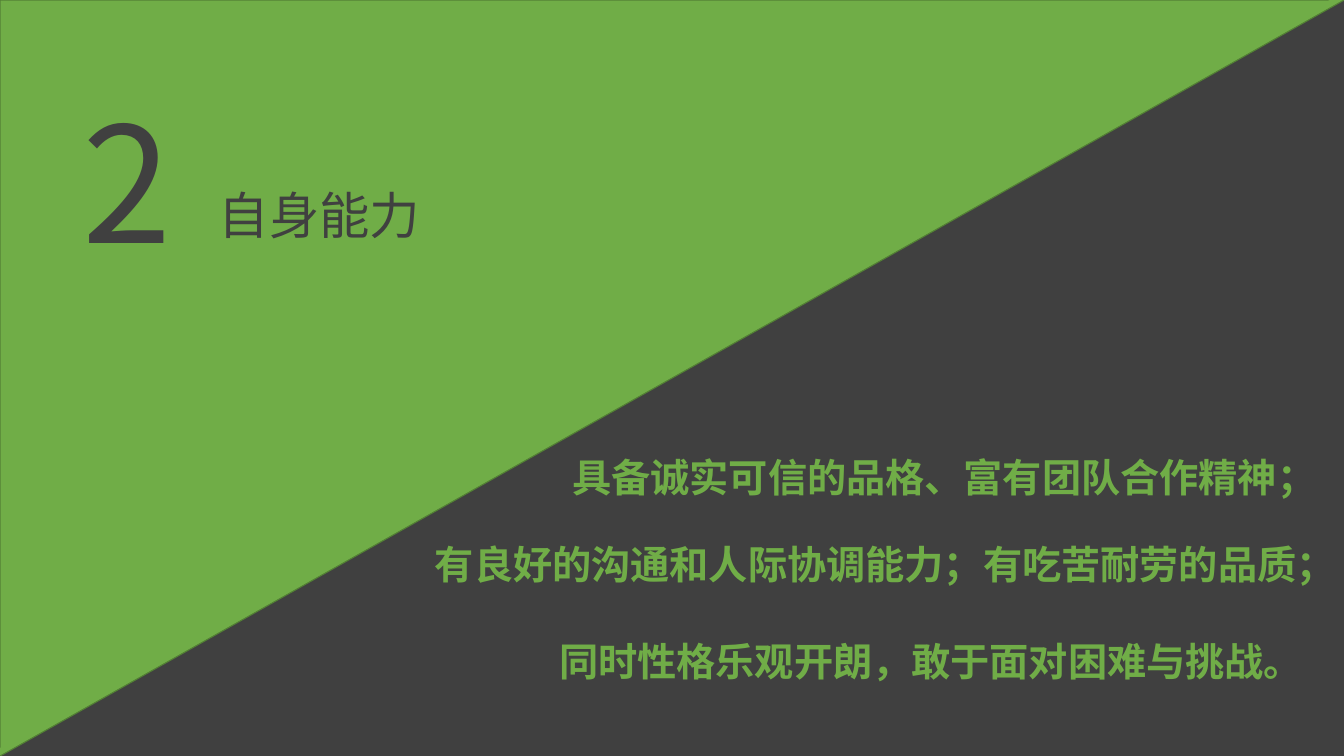
from dataclasses import dataclass

from lxml import etree
from pptx import Presentation
from pptx import util as u
from pptx.dml.color import RGBColor
from pptx.enum import shapes, text
from pptx.oxml.ns import qn


@dataclass(frozen=True)
class Theme:
    green: RGBColor = RGBColor.from_string("70AD47")
    edge: RGBColor = RGBColor.from_string("538035")
    dark: RGBColor = RGBColor.from_string("404040")
    font: str = "Noto Sans CJK SC"
    number: int = 115
    title: int = 36
    body: int = 28


THEME = Theme()
WIDE, HIGH = 13.33, 7.5
TRAITS = [
    ("具备诚实可信的品格、富有团队合作精神；", (5.57, 4.21, 7.59, 0.8), False),
    ("有良好的沟通和人际协调能力；有吃苦耐劳的品质；", (4.21, 5.08, 9.14, 0.8), False),
    ("同时性格乐观开朗，敢于面对困难与挑战。", (4.28, 6.04, 9.91, 0.8), True),
]


def inches(*sizes):
    return [u.Inches(size) for size in sizes]


def label(slide, box, words, size, color, wrap=True):
    shape = slide.shapes.add_textbox(*inches(*box))
    frame = shape.text_frame
    frame.text = words
    frame.word_wrap = wrap
    frame.auto_size = text.MSO_AUTO_SIZE.SHAPE_TO_FIT_TEXT
    para = frame.paragraphs[0]
    font = para.runs[0].font
    font.name, font.size = THEME.font, u.Pt(size)
    font.color.rgb = color
    # East Asian glyphs take their typeface from a:ea
    props = para.runs[0]._r.get_or_add_rPr()
    etree.SubElement(props, qn("a:ea")).set("typeface", THEME.font)
    return para


def corner(slide, box):
    """Fill the upper left half of the box and draw its diagonal."""
    left, top, wide, high = box
    shift = (wide - high) / 2
    half = slide.shapes.add_shape(
        shapes.MSO_SHAPE.RIGHT_TRIANGLE,
        *inches(left + shift, top - shift, high, wide))
    half.rotation = 90
    half.shadow.inherit = False
    half.fill.solid()
    half.fill.fore_color.rgb = THEME.green
    half.line.color.rgb = THEME.edge
    half.line.width = u.Pt(1)

    line = slide.shapes.add_connector(
        shapes.MSO_CONNECTOR.STRAIGHT,
        *inches(left + wide + 0.42, top - 0.28, left - 0.22, top + high + 0.08))
    line.line.color.rgb = THEME.green
    line.line.width = u.Pt(4.5)
    etree.SubElement(line._element.spPr, qn("a:effectLst"))


def heading(slide, box, number, title):
    left, top, wide, high = box
    label(slide, (left, top, 0.97, high), number, THEME.number, THEME.dark)
    label(slide, (left + 1.35, top + 1.01, wide - 1.35, 0.71),
          title, THEME.title, THEME.dark)


def trait(slide, box, words, wrap):
    para = label(slide, box, words, THEME.body, THEME.green, wrap)
    para.alignment = text.PP_ALIGN.CENTER
    para.line_spacing = 1.5
    para.runs[0].font.bold = True


def main():
    deck = Presentation()
    deck.slide_width, deck.slide_height = inches(WIDE, HIGH)
    slide = deck.slides.add_slide(deck.slide_layouts[6])
    slide.background.fill.solid()
    slide.background.fill.fore_color.rgb = THEME.dark
    corner(slide, (0, 0, WIDE, HIGH))
    heading(slide, (0.72, 0.77, 4.79, 2.04), "2", "自身能力")
    for words, box, wrap in TRAITS:
        trait(slide, box, words, wrap)
    deck.save("out.pptx")


if __name__ == "__main__":
    main()
